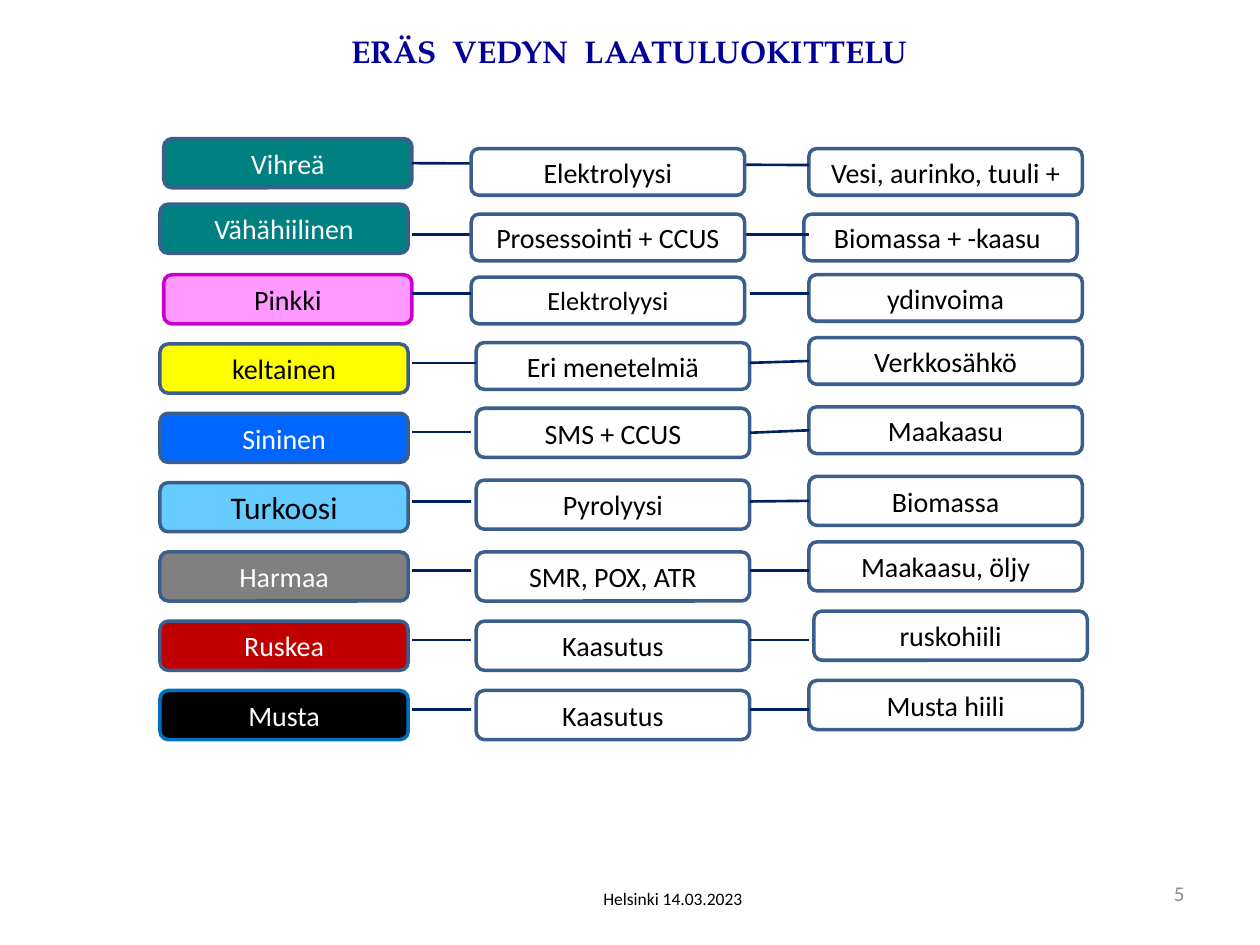
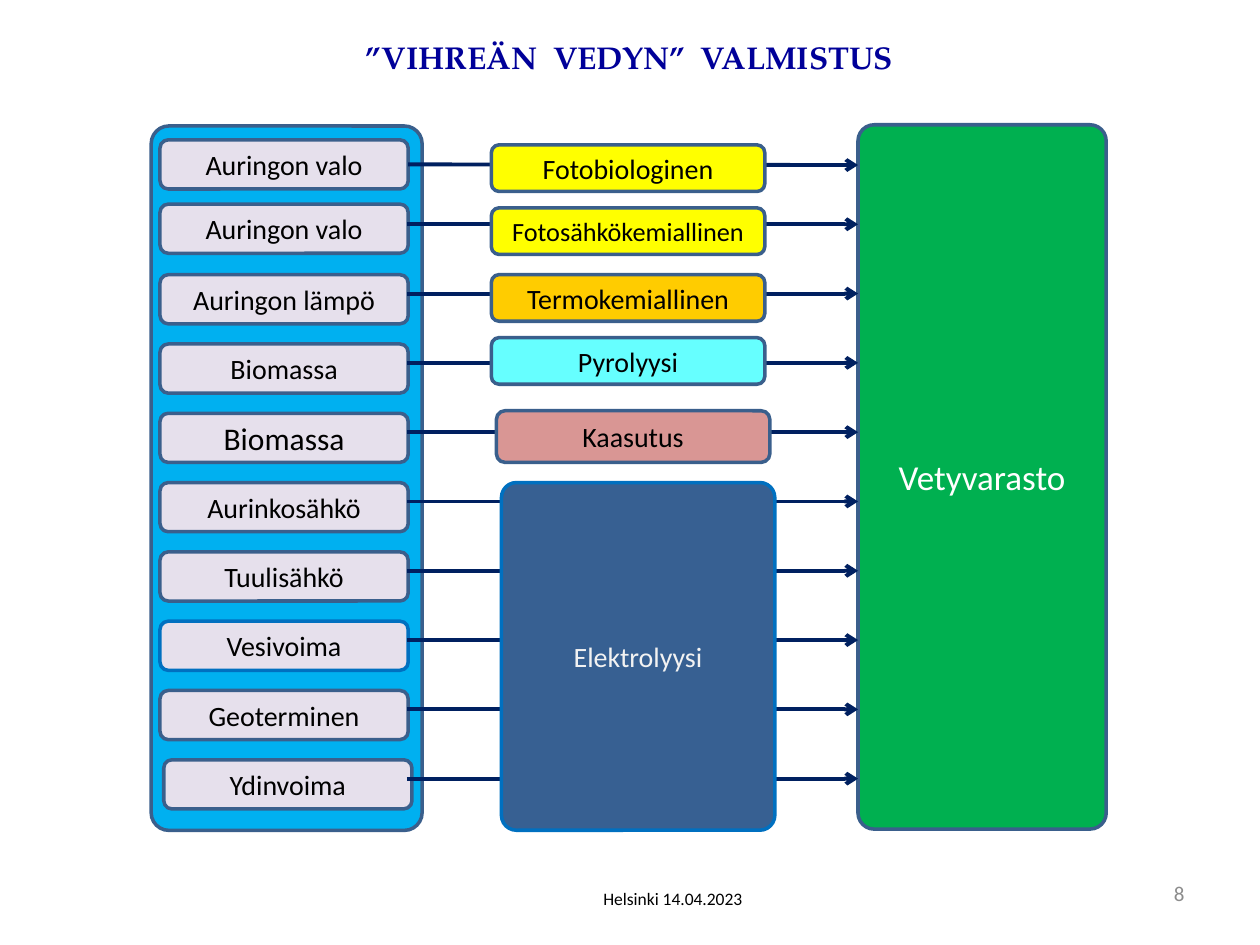
import pptx
import pptx.util
import pptx.dml.color
import pptx.enum.shapes
import pptx.enum.text
import pptx.oxml.ns
import lxml.etree

Inches = pptx.util.Inches
Pt = pptx.util.Pt
ALIGN = pptx.enum.text.PP_ALIGN
ANCHOR = pptx.enum.text.MSO_ANCHOR

BODY_FONT = "Calibri"
TITLE_FONT = "TeX Gyre Pagella"
BLACK, WHITE = "000000", "FFFFFF"
OUTLINE, BRIGHT_OUTLINE, LINK = "3A5F8C", "0070C0", "002060"
LILAC = "E6E0EC"
ROW_PITCH = 0.55
PILL_WIDTH, PILL_HEIGHT = 1.97, 0.39
STEP_WIDTH, STEP_HEIGHT = 2.17, 0.37
JOIN_TOLERANCE = 0.02

GRADES = [
    ("Vihreä", "008080", WHITE, OUTLINE, 16, 0.03, -0.21),
    ("Vähähiilinen", "008080", WHITE, OUTLINE, 16, 0, -0.24),
    ("Pinkki", "FF99FF", BLACK, "CC00CC", 16, 0.03, -0.15),
    ("keltainen", "FFFF00", BLACK, OUTLINE, 16, 0, -0.15),
    ("Sininen", "0066FF", WHITE, OUTLINE, 16, 0, -0.15),
    ("Turkoosi", "66CCFF", BLACK, OUTLINE, 18, 0, -0.15),
    ("Harmaa", "808080", WHITE, OUTLINE, 16, 0, -0.15),
    ("Ruskea", "C00000", WHITE, OUTLINE, 16, 0, -0.15),
    ("Musta", BLACK, WHITE, BRIGHT_OUTLINE, 16, 0, -0.15),
]
METHODS = [
    ("Elektrolyysi", 16, 2.47, -0.13, 0.37),
    ("Prosessointi + CCUS", 16, 2.47, -0.16, 0.37),
    ("Elektrolyysi", 15, 2.47, -0.13, 0.37),
    ("Eri menetelmiä", 16, 2.51, -0.16, 0.37),
    ("SMS + CCUS", 16, 2.51, -0.19, 0.39),
    ("Pyrolyysi", 16, 2.51, -0.17, 0.39),
    ("SMR, POX, ATR", 16, 2.51, -0.15, 0.39),
    ("Kaasutus", 16, 2.51, -0.15, 0.39),
    ("Kaasutus", 16, 2.51, -0.15, 0.39),
]
FEEDSTOCKS = [
    ("Vesi, aurinko, tuuli +", 5.15, -0.13, 0.37),
    ("Biomassa + -kaasu ", 5.11, -0.16, 0.37),
    ("ydinvoima", 5.15, -0.15, 0.37),
    ("Verkkosähkö", 5.15, -0.2, 0.37),
    ("Maakaasu", 5.15, -0.2, 0.37),
    ("Biomassa", 5.15, -0.2, 0.39),
    ("Maakaasu, öljy", 5.15, -0.23, 0.39),
    ("ruskohiili", 5.19, -0.23, 0.39),
    ("Musta hiili", 5.15, -0.23, 0.39),
]
ENERGIES = [
    "Auringon valo", "Auringon valo", "Auringon lämpö", "Biomassa", "Biomassa",
    "Aurinkosähkö", "Tuulisähkö", "Vesivoima", "Geoterminen", "Ydinvoima",
]
PROCESSES = [
    ("Fotobiologinen", "FFFF00", 16, 0, 0.15, STEP_HEIGHT),
    ("Fotosähkökemiallinen", "FFFF00", 15, 0, 0.65, STEP_HEIGHT),
    ("Termokemiallinen", "FFCC00", 16, 0, 1.18, STEP_HEIGHT),
    ("Pyrolyysi", "66FFFF", 16, 0, 1.68, STEP_HEIGHT),
    ("Kaasutus", "D99694", 16, 0.04, 2.26, 0.41),
]


def colour(value):
    return pptx.dml.color.RGBColor.from_string(value)


def lengths(box):
    return [Inches(length) for length in box]


def write(frame, text, size, ink, align=ALIGN.CENTER, font=BODY_FONT, bold=False):
    frame.word_wrap = True
    frame.text = text
    paragraph = frame.paragraphs[0]
    paragraph.alignment = align
    run = paragraph.runs[0]
    run.font.name = font
    run.font.size = Pt(size)
    run.font.bold = bold
    run.font.color.rgb = colour(ink)


def rounded(slide, box, fill, text="", ink=BLACK, size=16, outline=OUTLINE, corner=None):
    shape = slide.shapes.add_shape(
        pptx.enum.shapes.MSO_SHAPE.ROUNDED_RECTANGLE, *lengths(box))
    shape.shadow.inherit = False
    shape.fill.solid()
    shape.fill.fore_color.rgb = colour(fill)
    shape.line.color.rgb = colour(outline)
    shape.line.width = Pt(2)
    if corner is not None:
        shape.adjustments[0] = corner
    if text:
        shape.text_frame.vertical_anchor = ANCHOR.MIDDLE
        write(shape.text_frame, text, size, ink)
    return shape


def meets_side(shape, side_x, x, y):
    reach = Inches(JOIN_TOLERANCE)
    middle = shape.top + shape.height / 2
    return abs(side_x - Inches(x)) <= reach and abs(middle - Inches(y)) <= reach


def link(slide, start, end, y, width, before=None, after=None, arrow=False):
    connector = slide.shapes.add_connector(
        pptx.enum.shapes.MSO_CONNECTOR.STRAIGHT, *lengths((start, y, end, y)))
    connector.line.color.rgb = colour(LINK)
    connector.line.width = Pt(width)
    if before is not None and meets_side(before, before.left + before.width, start, y):
        connector.begin_connect(before, 3)
    if after is not None and meets_side(after, after.left, end, y):
        connector.end_connect(after, 1)
    qn = pptx.oxml.ns.qn
    if arrow:
        lxml.etree.SubElement(connector.line._get_or_add_ln(), qn("a:tailEnd"), type="arrow")
    lxml.etree.SubElement(connector._element.spPr, qn("a:effectLst"))


def add_page(deck, title, title_top, date, number):
    slide = deck.slides.add_slide(deck.slide_layouts[5])
    heading = slide.shapes.title
    heading.left, heading.top, heading.width, heading.height = lengths(
        (1.06, title_top, 7.87, 0.4))
    heading.text_frame.vertical_anchor = ANCHOR.TOP
    heading.text_frame.auto_size = pptx.enum.text.MSO_AUTO_SIZE.SHAPE_TO_FIT_TEXT
    write(heading.text_frame, title, 18, "000099", font=TITLE_FONT, bold=True)
    place_date = slide.shapes.add_textbox(*lengths((4.37, 7, 1.94, 0.28)))
    write(place_date.text_frame, f"Helsinki {date}", 10, BLACK)
    page_number = slide.shapes.add_textbox(*lengths((7.17, 6.83, 2.33, 0.52)))
    page_number.text_frame.vertical_anchor = ANCHOR.MIDDLE
    write(page_number.text_frame, number, 12, "8C8C8C", ALIGN.RIGHT)
    return slide


def row_lines(top, second, third, count):
    return [top, top + second] + [top + third + ROW_PITCH * i for i in range(count - 2)]


def classification(slide, left, top):
    line_ys = row_lines(top + 0.21, 0.55, 1.02, len(GRADES))
    for row, y in enumerate(line_ys):
        name, fill, ink, outline, size, dx, dy = GRADES[row]
        grade = rounded(slide, (left + dx, y + dy, PILL_WIDTH, PILL_HEIGHT),
                        fill, name, ink, size, outline)
        name, dx, dy, height = FEEDSTOCKS[row]
        feedstock = rounded(slide, (left + dx, y + dy, STEP_WIDTH, height), WHITE, name)
        link_start, link_end = left + 2, left + 5.15
        passes_behind = row < 2
        if passes_behind:
            link(slide, link_start, link_end, y, 1.5, grade, feedstock)
        name, size, dx, dy, height = METHODS[row]
        method = rounded(slide, (left + dx, y + dy, STEP_WIDTH, height),
                         WHITE, name, size=size)
        if not passes_behind:
            method_left = left + (2.51 if name == "Eri menetelmiä" else 2.47)
            link(slide, link_start, method_left, y, 1.5, grade, method)
            link(slide, left + 4.68, link_end, y, 1.5, method, feedstock)


def energy_panel(slide, left, top, width, height):
    rounded(slide, (left, top, width, height), "00B0F0", corner=0.065)
    tops = row_lines(top + 0.11, 0.51, 1.07, len(ENERGIES))
    pills = []
    for row, (energy, pill_top) in enumerate(zip(ENERGIES, tops)):
        dx = 0.1 if energy == "Ydinvoima" else 0.07
        outline = BRIGHT_OUTLINE if energy == "Vesivoima" else OUTLINE
        pills.append(rounded(slide, (left + dx, pill_top, PILL_WIDTH, PILL_HEIGHT),
                             LILAC, energy, size=18 if row == 4 else 16, outline=outline))
    return pills


def storage(slide, box):
    return rounded(slide, box, "00B050", "Vetyvarasto", WHITE, 20, corner=0.065)


def supply_links(slide, start, end, top, energies, store):
    for energy, y in zip(energies, row_lines(top, 0.47, 1.02, len(energies))):
        link(slide, start, end, y, 2.25, energy, store, arrow=True)


def processes(slide, left, top):
    for name, fill, size, dx, dy, height in PROCESSES:
        rounded(slide, (left + dx, top + dy, STEP_WIDTH, height), fill, name, size=size)
    rounded(slide, (left + 0.08, top + 2.83, STEP_WIDTH, 2.76), "376092", "Elektrolyysi",
            "F2F2F2", outline=BRIGHT_OUTLINE, corner=0.055)


def main():
    deck = pptx.Presentation()
    deck.slide_width, deck.slide_height = Inches(10), Inches(7.5)

    quality = add_page(deck, "ERÄS  VEDYN  LAATULUOKITTELU", 0.2, "14.03.2023", "5")
    classification(quality, 1.27, 1.1)

    production = add_page(deck, "”VIHREÄN  VEDYN”  VALMISTUS", 0.25, "14.04.2023", "8")
    energies = energy_panel(production, 1.2, 1, 2.15, 5.59)
    store = storage(production, (6.81, 0.99, 1.97, 5.59))
    supply_links(production, 3.23, 6.81, 1.31, energies, store)
    processes(production, 3.9, 1)

    deck.save("out.pptx")


if __name__ == "__main__":
    main()
